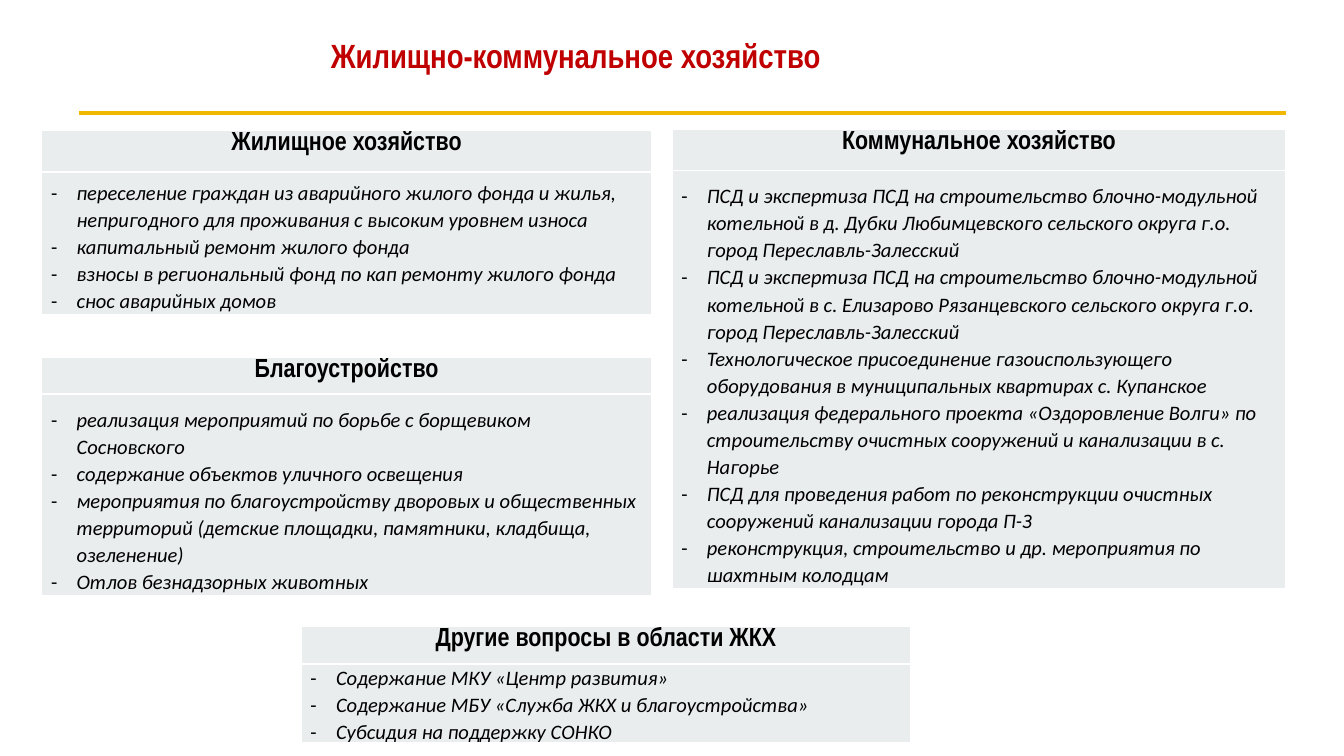
from lxml import etree
from pptx import Presentation
from pptx.dml.color import RGBColor
from pptx.enum.shapes import MSO_CONNECTOR as Connector
from pptx.enum.text import MSO_ANCHOR as Anchor, MSO_AUTO_SIZE as AutoSize, PP_ALIGN as Align
from pptx.oxml import parse_xml
from pptx.oxml.ns import nsdecls, qn
from pptx.util import Inches, Pt

RED = RGBColor(0xC0, 0x00, 0x00)
GOLD = RGBColor(0xF2, 0xB8, 0x00)
PANEL = RGBColor(0xE9, 0xED, 0xED)
BLACK = RGBColor(0x00, 0x00, 0x00)

LEFT, MIDDLE, RIGHT = 0.31, 2.24, 5
WIDTH = 4.54
INDENT = Inches(0.19)

# Left, top, width, heading height, list height, heading, items
PANELS = [
    (LEFT, 0.97, WIDTH, 0.31, 1.06, "Жилищное хозяйство", [
        "переселение граждан из аварийного жилого фонда и жилья, непригодного для проживания с высоким уровнем износа",
        "капитальный ремонт жилого фонда",
        "взносы в региональный фонд по кап ремонту жилого фонда",
        "снос аварийных домов",
    ]),
    (RIGHT, 0.96, 4.57, 0.31, 3.11, "Коммунальное хозяйство", [
        "ПСД и экспертиза ПСД на строительство блочно-модульной котельной в д. Дубки Любимцевского сельского округа г.о. город Переславль-Залесский",
        "ПСД и экспертиза ПСД на строительство блочно-модульной котельной в с. Елизарово Рязанцевского сельского округа г.о. город Переславль-Залесский",
        "Технологическое присоединение газоиспользующего оборудования в муниципальных квартирах с. Купанское",
        "реализация федерального проекта «Оздоровление Волги» по строительству очистных сооружений и канализации в с. Нагорье",
        "ПСД для проведения работ по реконструкции очистных сооружений канализации города П-З",
        "реконструкция, строительство и др. мероприятия по шахтным колодцам",
    ]),
    (LEFT, 2.66, WIDTH, 0.27, 1.5, "Благоустройство", [
        "реализация мероприятий по борьбе с борщевиком Сосновского",
        "содержание объектов уличного освещения",
        "мероприятия по благоустройству дворовых и общественных территорий (детские площадки, памятники, кладбища, озеленение)",
        "Отлов безнадзорных животных",
    ]),
    (MIDDLE, 4.66, WIDTH, 0.28, 0.59, "Другие вопросы в области ЖКХ", [
        "Содержание МКУ «Центр развития»",
        "Содержание МБУ «Служба ЖКХ и благоустройства»",
        "Субсидия на поддержку СОНКО",
    ]),
]


def style_font(font, name, size, color, bold=False, italic=False):
    font.name, font.size, font.bold, font.italic = name, Pt(size), bold, italic
    font.color.rgb = color


def style_cell(cell, side_margin, top_margin):
    """Set margins, panel fill and thin white borders."""
    cell.margin_left = cell.margin_right = Inches(side_margin)
    cell.margin_top, cell.margin_bottom = Inches(top_margin), 0
    cell.fill.solid()
    cell.fill.fore_color.rgb = PANEL
    properties = cell._tc.get_or_add_tcPr()
    for position, side in enumerate(("lnL", "lnR", "lnT", "lnB")):
        properties.insert(position, parse_xml(
            f'<a:{side} {nsdecls("a")} w="{Pt(1)}"><a:solidFill>'
            f'<a:srgbClr val="FFFFFF"/></a:solidFill></a:{side}>'))


presentation = Presentation()
presentation.slide_width = Inches(10)
presentation.slide_height = presentation.slide_width * 9 // 16
slide = presentation.slides.add_slide(presentation.slide_layouts[6])

rule = slide.shapes.add_connector(
    Connector.STRAIGHT, Inches(0.59), Inches(0.84), Inches(9.57), Inches(0.84))
rule.line.color.rgb = GOLD
rule.line.width = Pt(2.25)
etree.SubElement(rule._element.spPr, qn("a:effectLst"))

title = slide.shapes.add_textbox(Inches(0.75), Inches(0.21), Inches(7.07), Inches(0.4))
title.text_frame.word_wrap = True
title.text_frame.auto_size = AutoSize.SHAPE_TO_FIT_TEXT
title.text_frame.text = "Жилищно-коммунальное хозяйство"
paragraph = title.text_frame.paragraphs[0]
paragraph.alignment = Align.CENTER
style_font(paragraph.runs[0].font, "Arial Narrow", 18, RED, bold=True)

for left, top, width, heading_height, list_height, heading, items in PANELS:
    table = slide.shapes.add_table(
        2, 1, Inches(left), Inches(top), Inches(width),
        Inches(heading_height + list_height)).table
    table.rows[0].height = Inches(heading_height)
    table.rows[1].height = Inches(list_height)

    heading_cell, list_cell = table.cell(0, 0), table.cell(1, 0)
    style_cell(heading_cell, 0.01, 0.01)
    heading_cell.text_frame.text = heading
    paragraph = heading_cell.text_frame.paragraphs[0]
    paragraph.alignment = Align.CENTER
    style_font(paragraph.runs[0].font, "Arial Narrow", 14, BLACK, bold=True)

    style_cell(list_cell, 0.07, 0)
    list_cell.vertical_anchor = Anchor.BOTTOM
    list_cell.text_frame.text = "\n".join(items)
    for paragraph in list_cell.text_frame.paragraphs:
        properties = paragraph._p.get_or_add_pPr()
        properties.set("marL", str(INDENT))
        properties.set("indent", str(-INDENT))
        etree.SubElement(properties, qn("a:buFont"), typeface="Calibri")
        etree.SubElement(properties, qn("a:buChar"), char="-")
        paragraph.line_spacing = 1.07
        style_font(paragraph.runs[0].font, "Calibri", 11, BLACK, italic=True)

presentation.save("out.pptx")
